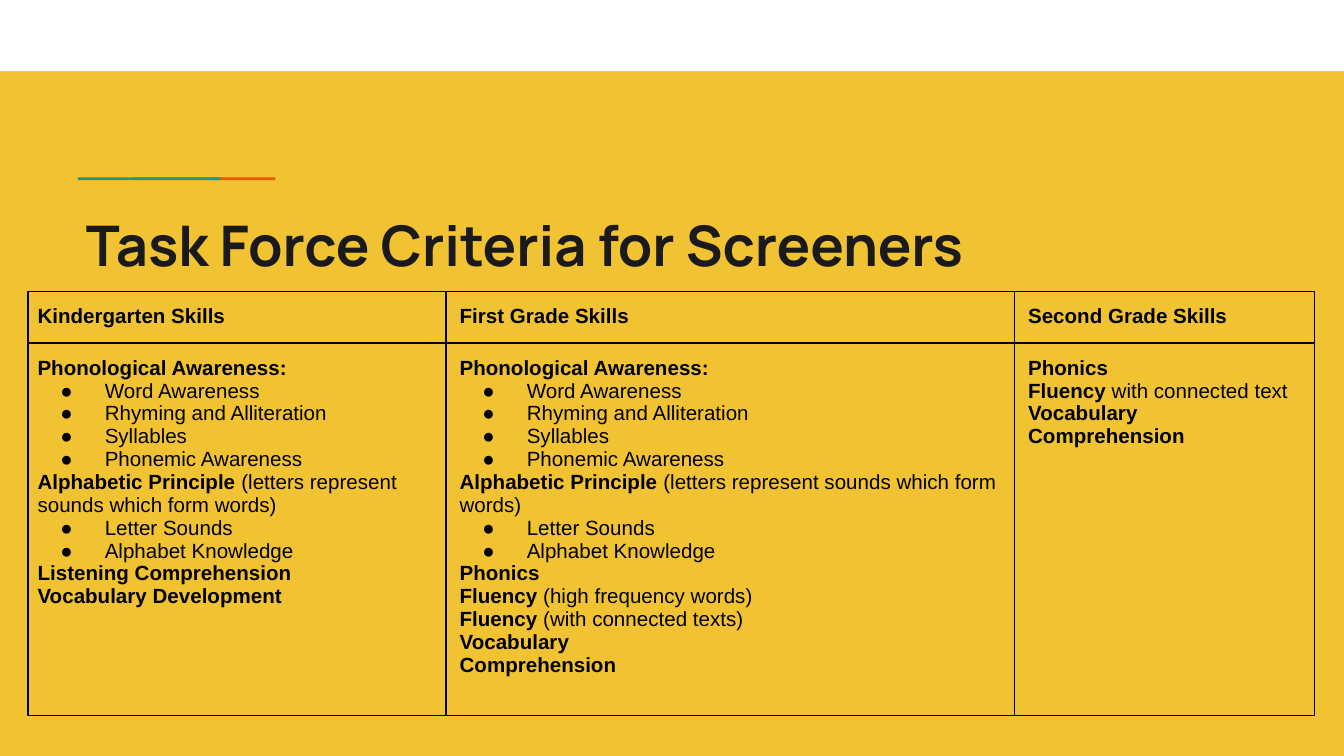
from lxml import etree
from pptx import Presentation
from pptx import util as u
from pptx.dml.color import RGBColor
from pptx.enum import shapes, text
from pptx.oxml import ns

COLORS = {
    "background": "F1C232",
    "band": "FFFFFF",
    "orange": "EB5600",
    "teal": "1A9988",
    "title": "1A1A1A",
    "ink": "000000",
}

# Each line is (bold part, regular part); a line with no bold part is a bullet.
FOUNDATIONS = [
    ("Phonological Awareness:", ""),
    ("", "Word Awareness"),
    ("", "Rhyming and Alliteration"),
    ("", "Syllables"),
    ("", "Phonemic Awareness"),
    ("Alphabetic Principle", " (letters represent sounds which form words)"),
    ("", "Letter Sounds"),
    ("", "Alphabet Knowledge"),
]
WORD_SKILLS = [("Vocabulary", ""), ("Comprehension", "")]

# Heading, column width, side margin, skills
GRADES = [
    ("Kindergarten Skills", 3.11, 0.07, FOUNDATIONS + [
        ("Listening Comprehension", ""),
        ("Vocabulary Development", ""),
    ]),
    ("First Grade Skills", 4.23, 0.1, FOUNDATIONS + [
        ("Phonics", ""),
        ("Fluency ", "(high frequency words)"),
        ("Fluency ", "(with connected texts)"),
    ] + WORD_SKILLS),
    ("Second Grade Skills", 2.23, 0.1, [
        ("Phonics", ""),
        ("Fluency ", "with connected text"),
    ] + WORD_SKILLS),
]
ROW_HEIGHTS = [0.29, 2.77]


def rgb(name):
    return RGBColor.from_string(COLORS[name])


def add_color(parent, name):
    etree.SubElement(parent, ns.qn("a:srgbClr"), val=COLORS[name])


class SlideBuilder:
    def __init__(self, slide):
        self.slide = slide
        fill = slide.background.fill
        fill.solid()
        fill.fore_color.rgb = rgb("background")

    def bar(self, left, top, width, height, color):
        bar = self.slide.shapes.add_shape(
            shapes.MSO_SHAPE.RECTANGLE,
            *map(u.Inches, (left, top, width, height)))
        bar.shadow.inherit = False
        bar.fill.solid()
        bar.fill.fore_color.rgb = rgb(color)
        bar.line.fill.background()

    def style(self, run, size, font, color, bold):
        run.font.size = u.Pt(size)
        run.font.name = font
        run.font.color.rgb = rgb(color)
        run.font.bold = bold

    def title(self, left, top, width, height, wording):
        box = self.slide.shapes.add_textbox(
            *map(u.Inches, (left, top, width, height)))
        frame = box.text_frame
        frame.word_wrap = True
        frame.vertical_anchor = text.MSO_ANCHOR.BOTTOM
        frame.margin_left = frame.margin_right = u.Inches(0.1)
        frame.margin_top = frame.margin_bottom = u.Inches(0.1)
        frame.text = wording
        self.style(frame.paragraphs[0].runs[0], 30, "Manrope", "title", True)

    def bullet(self, paragraph):
        props = paragraph._p.get_or_add_pPr()
        props.set("marL", str(u.Inches(0.5)))
        props.set("indent", str(u.Inches(-0.33)))
        add_color(etree.SubElement(props, ns.qn("a:buClr")), "ink")
        etree.SubElement(props, ns.qn("a:buFont"), typeface="Arial")
        etree.SubElement(props, ns.qn("a:buChar"), char="●")

    def borders(self, cell):
        props = cell._tc.get_or_add_tcPr()
        for place, side in enumerate(("lnL", "lnR", "lnT", "lnB")):
            line = etree.Element(ns.qn(f"a:{side}"), w=str(u.Pt(1)))
            add_color(etree.SubElement(line, ns.qn("a:solidFill")), "ink")
            props.insert(place, line)

    def cell(self, cell, side_margin, lines):
        cell.fill.background()
        self.borders(cell)
        cell.margin_left = cell.margin_right = u.Inches(side_margin)
        cell.margin_top = cell.margin_bottom = u.Inches(0.1)
        frame = cell.text_frame
        for index, (strong, regular) in enumerate(lines):
            paragraph = frame.add_paragraph() if index else frame.paragraphs[0]
            if not strong:
                self.bullet(paragraph)
            for wording, bold in ((strong, True), (regular, False)):
                if wording:
                    run = paragraph.add_run()
                    run.text = wording
                    self.style(run, 11, "Arial", "ink", bold)

    def skills_table(self, left, top, height, grades, row_heights):
        """Rows start at their minimum heights; the frame sets the full height."""
        width = sum(grade[1] for grade in grades)
        holder = self.slide.shapes.add_table(
            len(row_heights), len(grades),
            *map(u.Inches, (left, top, width, height)))
        table = holder.table
        table.first_row = table.horz_banding = False
        for row, row_height in zip(table.rows, row_heights):
            row.height = u.Inches(row_height)
        for col, (heading, col_width, margin, skills) in enumerate(grades):
            table.columns[col].width = u.Inches(col_width)
            self.cell(table.cell(0, col), margin, [(heading, "")])
            self.cell(table.cell(1, col), margin, skills)
        holder.height = u.Inches(height)


def main():
    deck = Presentation()
    deck.slide_width = u.Inches(10)
    deck.slide_height = deck.slide_width * 9 // 16
    builder = SlideBuilder(deck.slides.add_slide(deck.slide_layouts[6]))
    builder.bar(0, 0, 10, 0.53, "band")
    builder.bar(0.99, 1.32, 1.06, 0.02, "orange")
    builder.bar(0.58, 1.32, 1.06, 0.02, "teal")
    builder.title(0.54, 1.43, 8.63, 0.74, "Task Force Criteria for Screeners")
    builder.skills_table(0.21, 2.17, 3.16, GRADES, ROW_HEIGHTS)
    deck.save("out.pptx")


if __name__ == "__main__":
    main()
